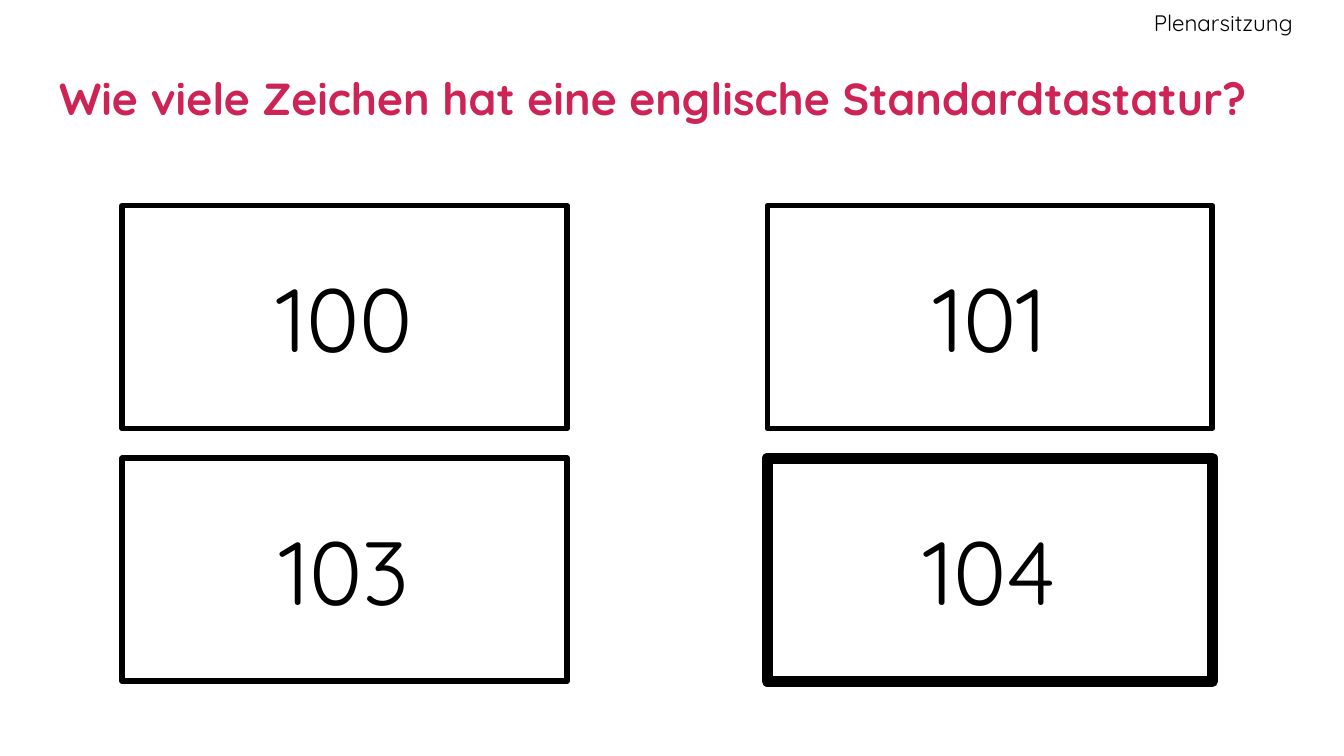
from dataclasses import dataclass

from lxml import etree
from pptx import Presentation
from pptx.dml.color import RGBColor
from pptx.enum.shapes import MSO_SHAPE
from pptx.enum.text import MSO_ANCHOR, MSO_AUTO_SIZE, PP_ALIGN
from pptx.oxml.ns import qn
from pptx.util import Inches, Pt

RECTANGLE = MSO_SHAPE.RECTANGLE
MIDDLE = MSO_ANCHOR.MIDDLE
NO_AUTOFIT = MSO_AUTO_SIZE.NONE
LEFT, CENTER, RIGHT = PP_ALIGN.LEFT, PP_ALIGN.CENTER, PP_ALIGN.RIGHT

SECTION = "Plenarsitzung"
QUESTION = "Wie viele Zeichen hat eine englische Standardtastatur?"
ANSWERS = [["100", "101"], ["103", "104"]]
CORRECT = "104"


@dataclass(frozen=True)
class Theme:
    font: str = "Quicksand"
    accent: RGBColor = RGBColor(0xCD, 0x23, 0x55)
    ink: RGBColor = RGBColor(0, 0, 0)
    paper: RGBColor = RGBColor(0xFF, 0xFF, 0xFF)
    section_size: int = 12
    question_size: int = 24
    answer_size: int = 48
    border: int = 3
    correct_border: int = 6


THEME = Theme()
SLIDE_WIDTH = 10
SLIDE_HEIGHT = SLIDE_WIDTH * 9 / 16
QUESTION_BOX = (0.34, 0.34, 9.32, 0.77)
SECTION_BOX = (7.48, 0, 2.14, 0.34)
GRID_LEFT, GRID_TOP = 0.91, 1.53
CARD_WIDTH, CARD_HEIGHT = 3.31, 1.66
COLUMN_STEP, ROW_STEP = 4.8, 1.88


def write(shape, text, size, color, align, insets, bold=False):
    frame = shape.text_frame
    frame.auto_size = NO_AUTOFIT
    frame.word_wrap = True
    frame.vertical_anchor = MIDDLE
    (frame.margin_left, frame.margin_top,
     frame.margin_right, frame.margin_bottom) = map(Inches, insets)
    paragraph = frame.paragraphs[0]
    paragraph.text = text
    paragraph.alignment = align
    font = paragraph.font
    font.name, font.size, font.bold = THEME.font, Pt(size), bold
    font.color.rgb = color


def add_answer(slide, answer, row, column):
    card = slide.shapes.add_shape(
        RECTANGLE,
        Inches(GRID_LEFT + column * COLUMN_STEP),
        Inches(GRID_TOP + row * ROW_STEP),
        Inches(CARD_WIDTH), Inches(CARD_HEIGHT))
    card.shadow.inherit = False
    card.fill.solid()
    card.fill.fore_color.rgb = THEME.paper
    card.line.color.rgb = THEME.ink
    card.line.width = Pt(THEME.correct_border if answer == CORRECT else THEME.border)
    outline = card.line.fill._xPr
    etree.SubElement(outline, qn("a:round"))
    write(card, answer, THEME.answer_size, THEME.ink, CENTER, [0.05] * 4)


def main():
    deck = Presentation()
    deck.slide_width, deck.slide_height = Inches(SLIDE_WIDTH), Inches(SLIDE_HEIGHT)
    slide = deck.slides.add_slide(deck.slide_layouts.get_by_name("Title Only"))

    question = slide.shapes.title
    question.left, question.top, question.width, question.height = map(Inches, QUESTION_BOX)
    write(question, QUESTION, THEME.question_size, THEME.accent, LEFT, [0.1] * 4, bold=True)

    section = slide.shapes.add_textbox(*map(Inches, SECTION_BOX))
    write(section, SECTION, THEME.section_size, THEME.ink, RIGHT, (0.1, 0.1, 0, 0.1))

    for row, answers in enumerate(ANSWERS):
        for column, answer in enumerate(answers):
            add_answer(slide, answer, row, column)

    deck.save("out.pptx")


if __name__ == "__main__":
    main()
